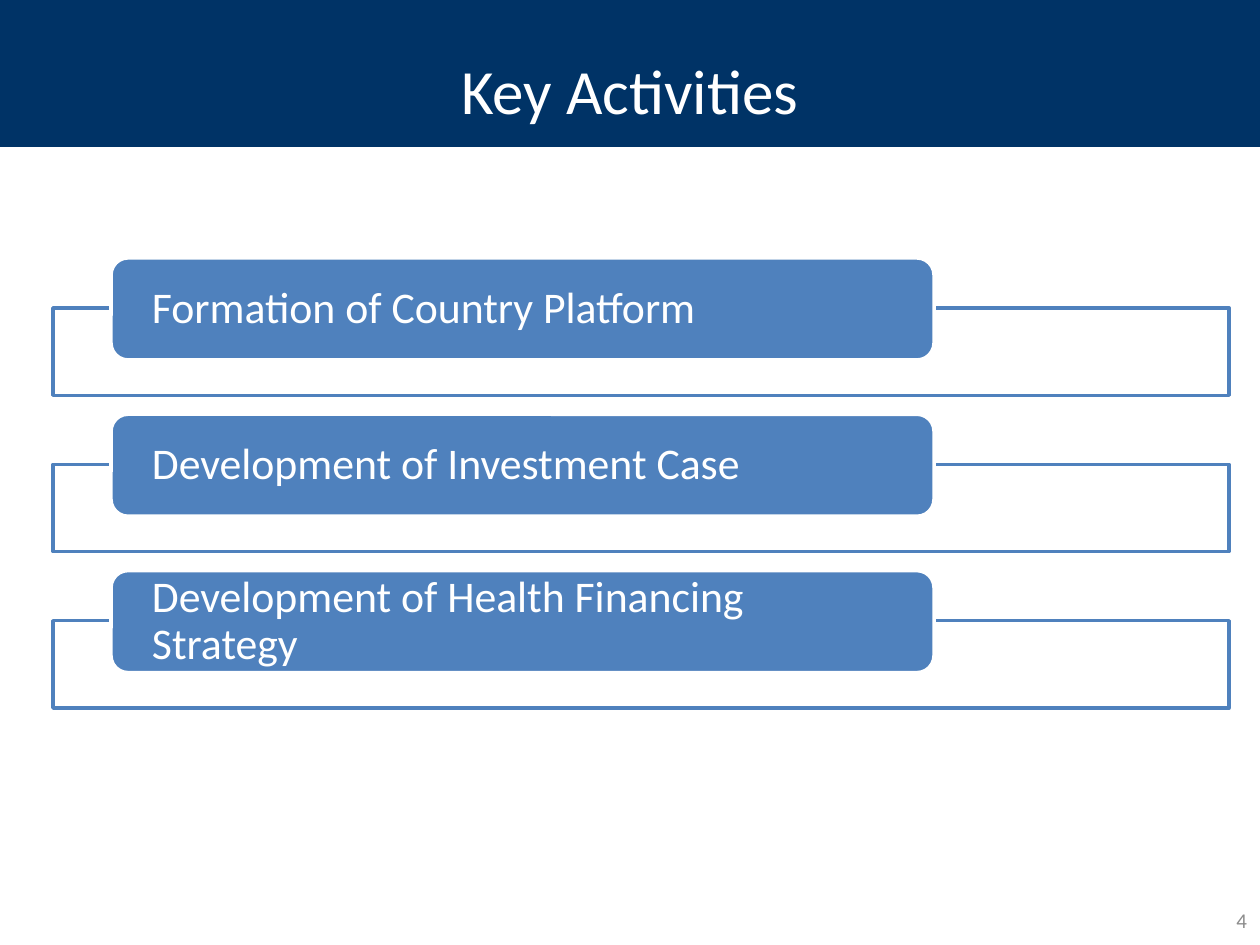
from lxml import etree
from pptx import Presentation
from pptx import util as u
from pptx.dml import color
from pptx.enum import shapes, text
from pptx.oxml import ns

EMU_PER_PX = 914400 / 126
NAVY, BLUE, WHITE, GREY = "003366", "4F81BD", "FFFFFF", "8C8C8C"
ACTIVITIES = [
    "Formation of Country Platform",
    "Development of Investment Case",
    "Development of Health Financing Strategy",
]


def px(length):
    return u.Emu(round(length * EMU_PER_PX))


def rgb(value):
    return color.RGBColor.from_string(value)


def add_box(slide, kind, box, fill, line=None):
    shape = slide.shapes.add_shape(kind, *map(px, box))
    shape.shadow.inherit = False
    shape.fill.solid()
    shape.fill.fore_color.rgb = rgb(fill)
    if line:
        shape.line.color.rgb = rgb(line)
        shape.line.width = u.Pt(2)
    else:
        shape.line.fill.background()
    return shape


def set_opacity(shape, percent):
    fill_color = shape.element.spPr.find(ns.qn("a:solidFill"))[0]
    etree.SubElement(fill_color, ns.qn("a:alpha"), val=str(percent * 1000))


def write(shape, words, size, ink, align, side_inset=13, end_inset=6):
    frame = shape.text_frame
    frame.word_wrap = True
    frame.vertical_anchor = text.MSO_ANCHOR.MIDDLE
    frame.margin_left = frame.margin_right = px(side_inset)
    frame.margin_top = frame.margin_bottom = px(end_inset)
    paragraph = frame.paragraphs[0]
    paragraph.text = words
    paragraph.alignment = align
    paragraph.font.name = "Calibri"
    paragraph.font.size = u.Pt(size)
    paragraph.font.color.rgb = rgb(ink)
    return paragraph


def add_header(slide, box, words):
    left, top, width, height = box
    band = add_box(slide, shapes.MSO_SHAPE.RECTANGLE, box, NAVY)
    title = slide.shapes.title
    title.element.addprevious(band.element)
    title.left, title.top = px(left + 63), px(top + 10)
    title.width, title.height = px(width - 126), px(height + 11)
    write(title, words, 36, WHITE, text.PP_ALIGN.CENTER)


def add_activity(slide, box, words):
    """Outlined panel with a label overlapping its top edge."""
    left, top, width, height = box
    label_height = 102
    panel_top = top + label_height // 2 - 1
    panel = add_box(slide, shapes.MSO_SHAPE.RECTANGLE,
                    (left, panel_top, width, top + height - panel_top), WHITE, BLUE)
    set_opacity(panel, 90)
    label = add_box(slide, shapes.MSO_SHAPE.ROUNDED_RECTANGLE,
                    (left + 58, top, 823, label_height), BLUE, WHITE)
    paragraph = write(label, words, 25, WHITE, text.PP_ALIGN.LEFT, 36, 0)
    paragraph.line_spacing = 0.9


def add_activities(slide, box, activities):
    left, top, width, height = box
    gap = 19
    row_height = (height - gap * (len(activities) - 1)) / len(activities)
    for index, words in enumerate(activities):
        row_top = top + index * (row_height + gap)
        add_activity(slide, (left, row_top, width, row_height), words)


def add_page_number(slide, box, number):
    shape = slide.shapes.add_textbox(*map(px, box))
    write(shape, str(number), 12, GREY, text.PP_ALIGN.RIGHT)


def main():
    presentation = Presentation()
    presentation.slide_width, presentation.slide_height = px(1260), px(945)
    slide = presentation.slides.add_slide(presentation.slide_layouts.get_by_name("Title Only"))
    add_header(slide, (0, 0, 1260, 147), "Key Activities")
    add_activities(slide, (53, 258, 1176, 450), ACTIVITIES)
    add_page_number(slide, (966, 895, 294, 50), 4)
    presentation.save("out.pptx")


if __name__ == "__main__":
    main()
